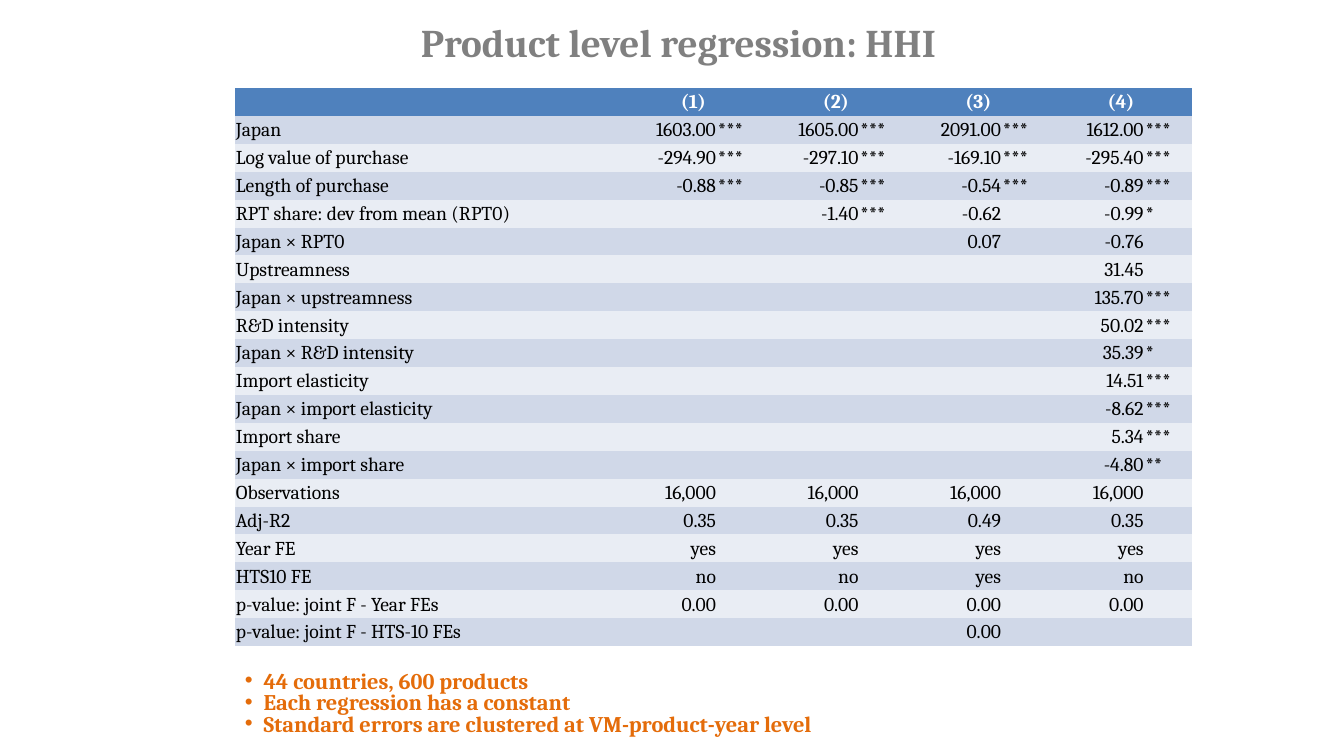
from dataclasses import dataclass
from lxml.etree import SubElement
from pptx import Presentation
from pptx.dml.color import RGBColor
from pptx.enum.text import MSO_ANCHOR as Anchor, MSO_AUTO_SIZE as AutoSize, PP_ALIGN as Align
from pptx.oxml.ns import qn
from pptx.util import Pt


@dataclass(frozen=True)
class Theme:
    font: str = "Cambria"
    title: str = "808080"
    header: str = "4F81BD"
    bands: tuple = ("D0D8E8", "E9EDF4")
    ink: str = "000000"
    paper: str = "FFFFFF"
    accent: str = "E46C0A"
    title_size: int = 28
    table_size: int = 14
    note_size: int = 16


THEME = Theme()
TITLE_BOX = (174.24, 22.32, 620.64, 28.08)
TABLE_BOX = (167.76, 62.9, 684, 399)
NOTES_BOX = (167.76, 476.64, 620.64, 57.6)
LABEL_WIDTH, VALUE_WIDTH, STARS_WIDTH = 276.6, 67.8, 34.05
NO_GRID_STYLE = "{2D5ABB26-0587-4C30-8999-92F81FD0307C}"

MODELS = ["(1)", "(2)", "(3)", "(4)"]
ESTIMATES = [
    ("Japan", "1603.00***", "1605.00***", "2091.00***", "1612.00***"),
    ("Log value of purchase", "-294.90***", "-297.10***", "-169.10***", "-295.40***"),
    ("Length of purchase", "-0.88***", "-0.85***", "-0.54***", "-0.89***"),
    ("RPT share: dev from mean (RPT0)", "", "-1.40***", "-0.62", "-0.99*"),
    ("Japan × RPT0", "", "", "0.07", "-0.76"),
    ("Upstreamness", "", "", "", "31.45"),
    ("Japan × upstreamness", "", "", "", "135.70***"),
    ("R&D intensity", "", "", "", "50.02***"),
    ("Japan × R&D intensity", "", "", "", "35.39*"),
    ("Import elasticity", "", "", "", "14.51***"),
    ("Japan × import elasticity", "", "", "", "-8.62***"),
    ("Import share", "", "", "", "5.34***"),
    ("Japan × import share", "", "", "", "-4.80**"),
    ("Observations", "16,000", "16,000", "16,000", "16,000"),
    ("Adj-R2", "0.35", "0.35", "0.49", "0.35"),
    ("Year FE", "yes", "yes", "yes", "yes"),
    ("HTS10 FE", "no", "no", "yes", "no"),
    ("p-value: joint F - Year FEs", "0.00", "0.00", "0.00", "0.00"),
    ("p-value: joint F - HTS-10 FEs", "", "", "0.00", ""),
]
NOTES = [
    "44 countries, 600 products",
    "Each regression has a constant",
    "Standard errors are clustered at VM-product-year level",
]


def write(para, text, size, color, bold=False, align=Align.LEFT, spacing=None):
    para.alignment = align
    if spacing:
        para.line_spacing = spacing
    if not text:
        para._p.get_or_add_endParaRPr().set("sz", str(size * 100))
        return
    span = para.add_run()
    span.text = text
    span.font.name = THEME.font
    span.font.size = Pt(size)
    span.font.bold = bold
    span.font.color.rgb = RGBColor.from_string(color)


def add_bullet(para, indent):
    props = para._p.get_or_add_pPr()
    props.set("marL", str(Pt(indent)))
    props.set("indent", str(-Pt(indent)))
    SubElement(props, qn("a:buFont")).set("typeface", "Arial")
    SubElement(props, qn("a:buChar")).set("char", "•")


def fill_cell(cell, text, fill, **style):
    cell.fill.solid()
    cell.fill.fore_color.rgb = RGBColor.from_string(fill)
    cell.vertical_anchor = Anchor.MIDDLE
    cell.margin_left = cell.margin_right = cell.margin_top = Pt(0.7)
    cell.margin_bottom = Pt(0)
    write(cell.text_frame.paragraphs[0], text, THEME.table_size, **style)


def place_title(page, box, text):
    title = page.shapes.title
    title.left, title.top, title.width, title.height = map(Pt, box)
    frame = title.text_frame
    frame.word_wrap = True
    frame.auto_size = AutoSize.NONE
    frame.vertical_anchor = Anchor.BOTTOM
    write(frame.paragraphs[0], text, THEME.title_size, THEME.title,
          bold=True, align=Align.CENTER, spacing=0.9)


def place_regression_table(page, box, models, estimates):
    row_count = len(estimates) + 1
    widths = [LABEL_WIDTH] + [VALUE_WIDTH, STARS_WIDTH] * len(models)
    frame = page.shapes.add_table(row_count, len(widths), *map(Pt, box))
    table = frame.table
    table._tbl.tblPr.find(qn("a:tableStyleId")).text = NO_GRID_STYLE
    for column, width in zip(table.columns, widths):
        column.width = Pt(width)
    for row in table.rows:
        row.height = Pt(box[3] / row_count)

    fill_cell(table.cell(0, 0), "", THEME.header, color=THEME.paper)
    for index, model in enumerate(models):
        left = 1 + 2 * index
        table.cell(0, left).merge(table.cell(0, left + 1))
        fill_cell(table.cell(0, left), model, THEME.header,
                  color=THEME.paper, bold=True, align=Align.CENTER)

    for row, (label, *values) in enumerate(estimates, start=1):
        band = THEME.bands[(row - 1) % 2]
        fill_cell(table.cell(row, 0), label, band, color=THEME.ink)
        for index, value in enumerate(values):
            number = value.rstrip("*")
            left = 1 + 2 * index
            fill_cell(table.cell(row, left), number, band, color=THEME.ink, align=Align.RIGHT)
            fill_cell(table.cell(row, left + 1), value[len(number):], band, color=THEME.ink)


def place_notes(page, box, notes):
    frame = page.shapes.add_textbox(*map(Pt, box)).text_frame
    frame.word_wrap = True
    frame.auto_size = AutoSize.TEXT_TO_FIT_SHAPE
    for index, note in enumerate(notes):
        para = frame.add_paragraph() if index else frame.paragraphs[0]
        write(para, note, THEME.note_size, THEME.accent, bold=True, spacing=0.8)
        add_bullet(para, 13.5)


def main():
    deck = Presentation()
    deck.slide_width, deck.slide_height = Pt(960), Pt(540)
    page = deck.slides.add_slide(deck.slide_layouts.get_by_name("Title Only"))
    place_title(page, TITLE_BOX, "Product level regression: HHI")
    place_regression_table(page, TABLE_BOX, MODELS, ESTIMATES)
    place_notes(page, NOTES_BOX, NOTES)
    deck.save("out.pptx")


if __name__ == "__main__":
    main()
